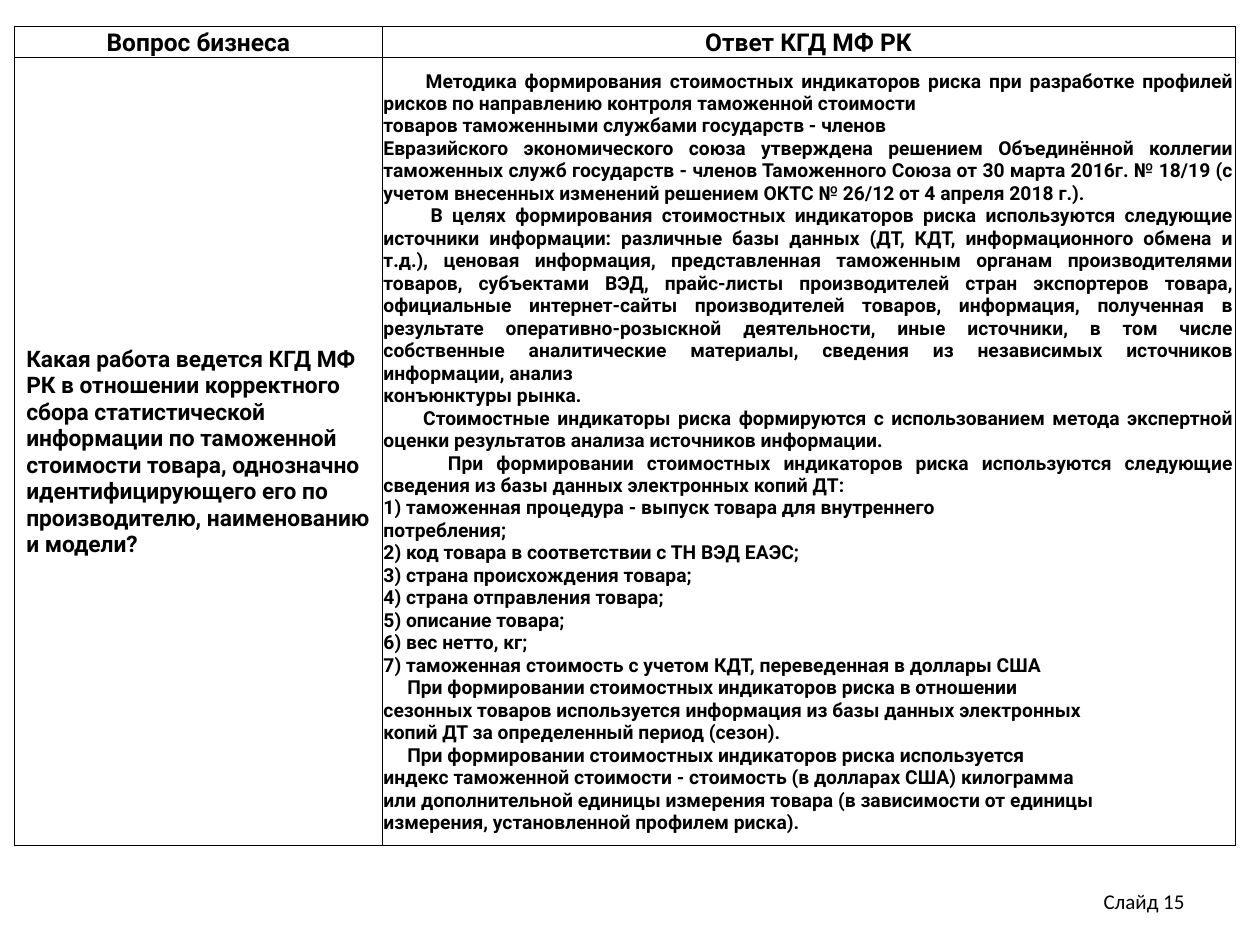
from lxml.etree import SubElement
from pptx import Presentation
from pptx.dml.color import RGBColor
from pptx.enum.text import MSO_ANCHOR, PP_ALIGN
from pptx.oxml.ns import qn
from pptx.util import Cm, Pt

INK = "000000"
HEADS = ["Вопрос бизнеса", "Ответ КГД МФ РК"]
ASK = (
    "Какая работа ведется КГД МФ РК в отношении корректного сбора "
    "статистической информации по таможенной стоимости товара, однозначно "
    "идентифицирующего его по производителю, наименованию и модели?"
)
REPLY = [
    (0.85, "Методика формирования стоимостных индикаторов риска при разработке "
           "профилей рисков по направлению контроля таможенной стоимости"),
    (0, "товаров таможенными службами государств - членов"),
    (0, "Евразийского экономического союза утверждена решением Объединённой "
        "коллегии таможенных служб государств - членов Таможенного Союза от "
        "30 марта 2016г. № 18/19 (с учетом внесенных изменений решением "
        "ОКТС № 26/12 от 4 апреля 2018 г.)."),
    (0.95, "В целях формирования стоимостных индикаторов риска используются "
           "следующие источники информации: различные базы данных (ДТ, КДТ, "
           "информационного обмена и т.д.), ценовая информация, представленная "
           "таможенным органам производителями товаров, субъектами ВЭД, "
           "прайс-листы производителей стран экспортеров товара, официальные "
           "интернет-сайты производителей товаров, информация, полученная в "
           "результате оперативно-розыскной деятельности, иные источники, в том "
           "числе собственные аналитические материалы, сведения из независимых "
           "источников информации, анализ"),
    (0, "конъюнктуры рынка."),
    (0.8, "Стоимостные индикаторы риска формируются с использованием метода "
          "экспертной оценки результатов анализа источников информации."),
    (1.3, "При формировании стоимостных индикаторов риска используются "
          "следующие сведения из базы данных электронных копий ДТ:"),
    (0, "1) таможенная процедура - выпуск товара для внутреннего"),
    (0, "потребления;"),
    (0, "2) код товара в соответствии с ТН ВЭД ЕАЭС;"),
    (0, "3) страна происхождения товара;"),
    (0, "4) страна отправления товара;"),
    (0, "5) описание товара;"),
    (0, "6) вес нетто, кг;"),
    (0, "7) таможенная стоимость с учетом КДТ, переведенная в доллары США"),
    (0.48, "При формировании стоимостных индикаторов риска в отношении"),
    (0, "сезонных товаров используется информация из базы данных электронных"),
    (0, "копий ДТ за определенный период (сезон)."),
    (0.48, "При формировании стоимостных индикаторов риска используется"),
    (0, "индекс таможенной стоимости - стоимость (в долларах США) килограмма"),
    (0, "или дополнительной единицы измерения товара (в зависимости от единицы"),
    (0, "измерения, установленной профилем риска)."),
]


def color(code):
    """Turn a hex string into a colour."""
    return RGBColor.from_string(code)


def style(para, size, align, font="Roboto", bold=True):
    """Format a paragraph and its runs."""
    para.alignment = align
    for run in para.runs:
        run.font.name = font
        run.font.size = Pt(size)
        run.font.bold = bold
        run.font.color.rgb = color(INK)


def frame(cell):
    """Draw thin borders round a cell and clear its fill."""
    props = cell._tc.get_or_add_tcPr()
    for side in ("lnL", "lnR", "lnT", "lnB"):
        line = SubElement(props, qn("a:" + side), w=str(Pt(0.5)))
        fill = SubElement(line, qn("a:solidFill"))
        SubElement(fill, qn("a:srgbClr"), val=INK)
    cell.fill.background()


def write(cell, items, size, align, anchor, left=0.03):
    """Fill a cell with pairs of first-line indent and text."""
    frame(cell)
    cell.margin_left, cell.margin_right = Cm(left), Cm(0.03)
    cell.margin_top, cell.margin_bottom = Cm(0.03), 0
    cell.vertical_anchor = anchor
    text = cell.text_frame
    text.text = "\n".join(line for _, line in items)
    for para, (indent, _) in zip(text.paragraphs, items):
        style(para, size, align)
        if indent:
            para._p.get_or_add_pPr().set("indent", str(Cm(indent)))


def add_grid(slide, left, top, widths, heights):
    """Place the table of question and answer."""
    table = slide.shapes.add_table(
        2, 2, Cm(left), Cm(top), Cm(sum(widths)), Cm(sum(heights))
    ).table
    table.first_row = table.horz_banding = False
    for col, width in zip(table.columns, widths):
        col.width = Cm(width)
    for row, height in zip(table.rows, heights):
        row.height = Cm(height)
    for col, head in enumerate(HEADS):
        write(table.cell(0, col), [(0, head)], 14, PP_ALIGN.CENTER, MSO_ANCHOR.BOTTOM)
    write(table.cell(1, 0), [(0, ASK)], 13, PP_ALIGN.LEFT, MSO_ANCHOR.MIDDLE, 0.23)
    write(table.cell(1, 1), REPLY, 11, PP_ALIGN.JUSTIFY, MSO_ANCHOR.MIDDLE)


def add_foot(slide, left, top, width, height):
    """Place the slide number label."""
    box = slide.shapes.add_textbox(Cm(left), Cm(top), Cm(width), Cm(height))
    text = box.text_frame
    text.word_wrap = True
    text.vertical_anchor = MSO_ANCHOR.MIDDLE
    text.text = "Слайд 15"
    style(text.paragraphs[0], 12, PP_ALIGN.RIGHT, "Calibri", False)


def main():
    """Build and save the deck."""
    deck = Presentation()
    deck.slide_width, deck.slide_height = Cm(25.4), Cm(19.05)
    slide = deck.slides.add_slide(deck.slide_layouts[6])
    add_grid(slide, 0.3, 0.53, [7.4, 17.2], [0.63, 15.88])
    add_foot(slide, 18.21, 17.65, 5.92, 1.02)
    deck.save("out.pptx")


if __name__ == "__main__":
    main()
